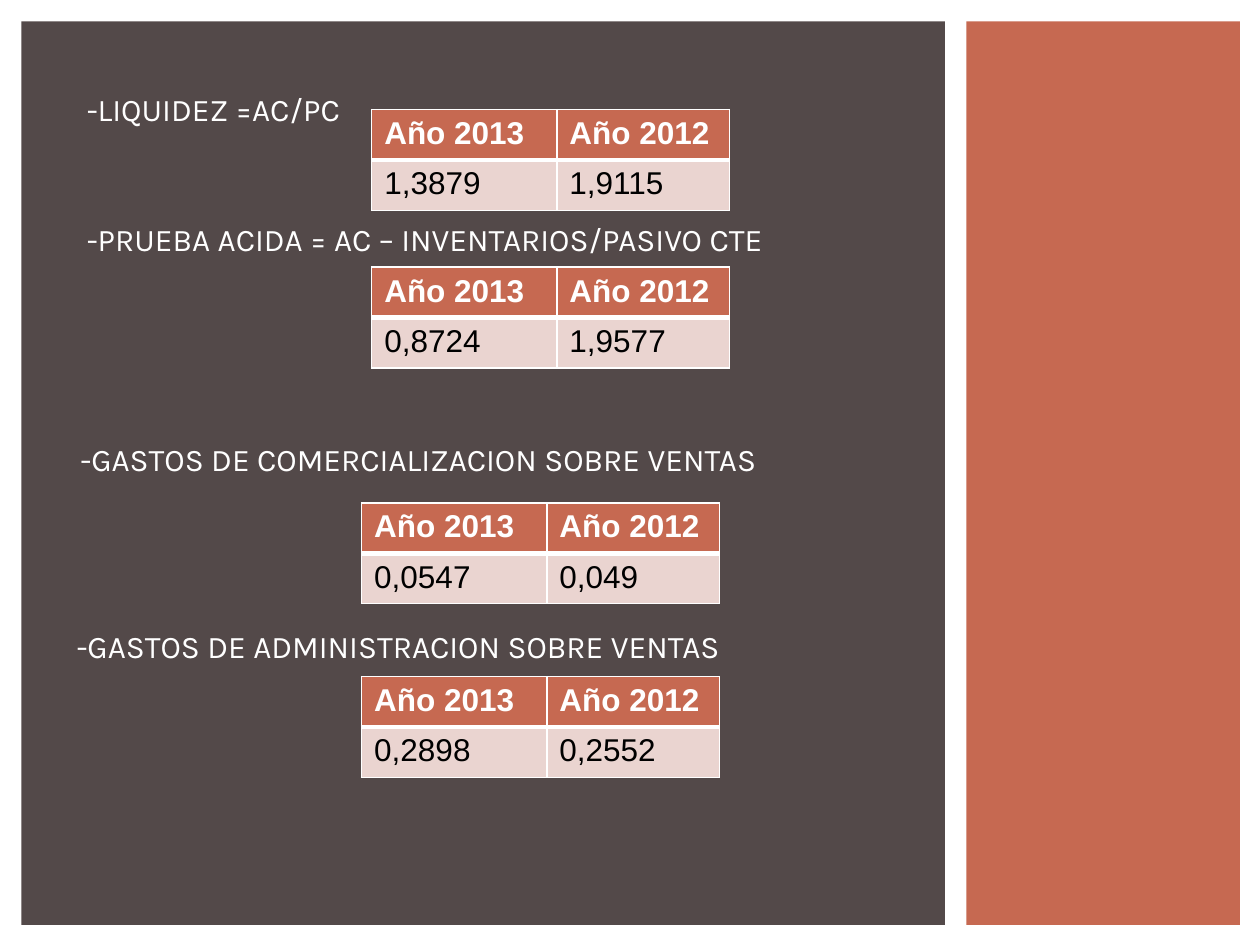
from lxml.etree import SubElement
from pptx import Presentation
from pptx.dml.color import RGBColor
from pptx.enum.shapes import MSO_SHAPE
from pptx.enum.text import MSO_ANCHOR
from pptx.oxml.ns import qn
from pptx.util import Inches, Pt

WHITE, BLACK = "FFFFFF", "000000"
TERRACOTTA, BROWN, PINK = "C66951", "534949", "EAD4D0"
YEARS = ("Año 2013", "Año 2012")


def color(hex_code):
    return RGBColor.from_string(hex_code)


class RatioSlide:
    label_font, table_font, size = "Karla", "Arial", Pt(18)
    column_widths, row_height = (1.47, 1.37), 0.4

    def __init__(self, slide):
        self.slide = slide

    def panel(self, left, top, width, height, fill):
        panel = self.slide.shapes.add_shape(
            MSO_SHAPE.RECTANGLE, Inches(left), Inches(top), Inches(width), Inches(height))
        panel.shadow.inherit = False
        panel.fill.solid()
        panel.fill.fore_color.rgb = color(fill)
        panel.line.fill.background()

    def format_text(self, frame, font_name, text_color, bold=False):
        font = frame.paragraphs[0].runs[0].font
        font.name, font.size, font.bold = font_name, self.size, bold
        font.color.rgb = color(text_color)

    def label(self, text, left, top, width, height):
        box = self.slide.shapes.add_textbox(
            Inches(left), Inches(top), Inches(width), Inches(height))
        frame = box.text_frame
        frame.word_wrap = True
        frame.vertical_anchor = MSO_ANCHOR.MIDDLE
        frame.text = text
        self.format_text(frame, self.label_font, WHITE)

    def borders(self, cell, **widths):
        properties = cell._tc.get_or_add_tcPr()
        for side in "LRTB":
            line = SubElement(properties, qn(f"a:ln{side}"), w=str(Pt(widths.get(side, 1))))
            fill = SubElement(line, qn("a:solidFill"))
            SubElement(fill, qn("a:srgbClr"), val=WHITE)

    def year_table(self, values, left, top):
        table = self.slide.shapes.add_table(
            2, len(YEARS), Inches(left), Inches(top),
            Inches(sum(self.column_widths)), Inches(2 * self.row_height)).table
        for column, width in zip(table.columns, self.column_widths):
            column.width = Inches(width)
        for row, texts in enumerate((YEARS, values)):
            header = row == 0
            for column, text in enumerate(texts):
                cell = table.cell(row, column)
                # The thick rule lies between the years and the values
                self.borders(cell, **({"B": 3} if header else {"T": 3}))
                cell.fill.solid()
                cell.fill.fore_color.rgb = color(TERRACOTTA if header else PINK)
                cell.text_frame.text = text
                self.format_text(cell.text_frame, self.table_font,
                                 WHITE if header else BLACK, bold=header)


def main():
    prs = Presentation()
    prs.slide_width, prs.slide_height = Inches(10), Inches(7.5)
    ratios_slide = RatioSlide(prs.slides.add_slide(prs.slide_layouts[6]))

    # Background panels
    ratios_slide.panel(7.67, 0.17, 2.17, 7.17, TERRACOTTA)
    ratios_slide.panel(0.17, 0.17, 7.33, 7.17, BROWN)

    # Each ratio: label, label box, values, table position
    ratios = (
        ("-LIQUIDEZ =AC/PC", (0.59, 0.36, 6.69, 1.01),
         ("1,3879", "1,9115"), (2.95, 0.87)),
        ("-PRUEBA ACIDA = AC – INVENTARIOS/PASIVO CTE", (0.59, 1.7, 6.69, 0.4),
         ("0,8724", "1,9577"), (2.95, 2.12)),
        ("-GASTOS DE COMERCIALIZACION SOBRE VENTAS", (0.54, 3.44, 6.06, 0.4),
         ("0,0547", "0,049"), (2.87, 3.99)),
        ("-GASTOS DE ADMINISTRACION SOBRE VENTAS", (0.51, 4.93, 6.06, 0.4),
         ("0,2898", "0,2552"), (2.87, 5.37)),
    )
    for name, label_box, values, table_corner in ratios:
        ratios_slide.label(name, *label_box)
        ratios_slide.year_table(values, *table_corner)

    prs.save("out.pptx")


if __name__ == "__main__":
    main()
